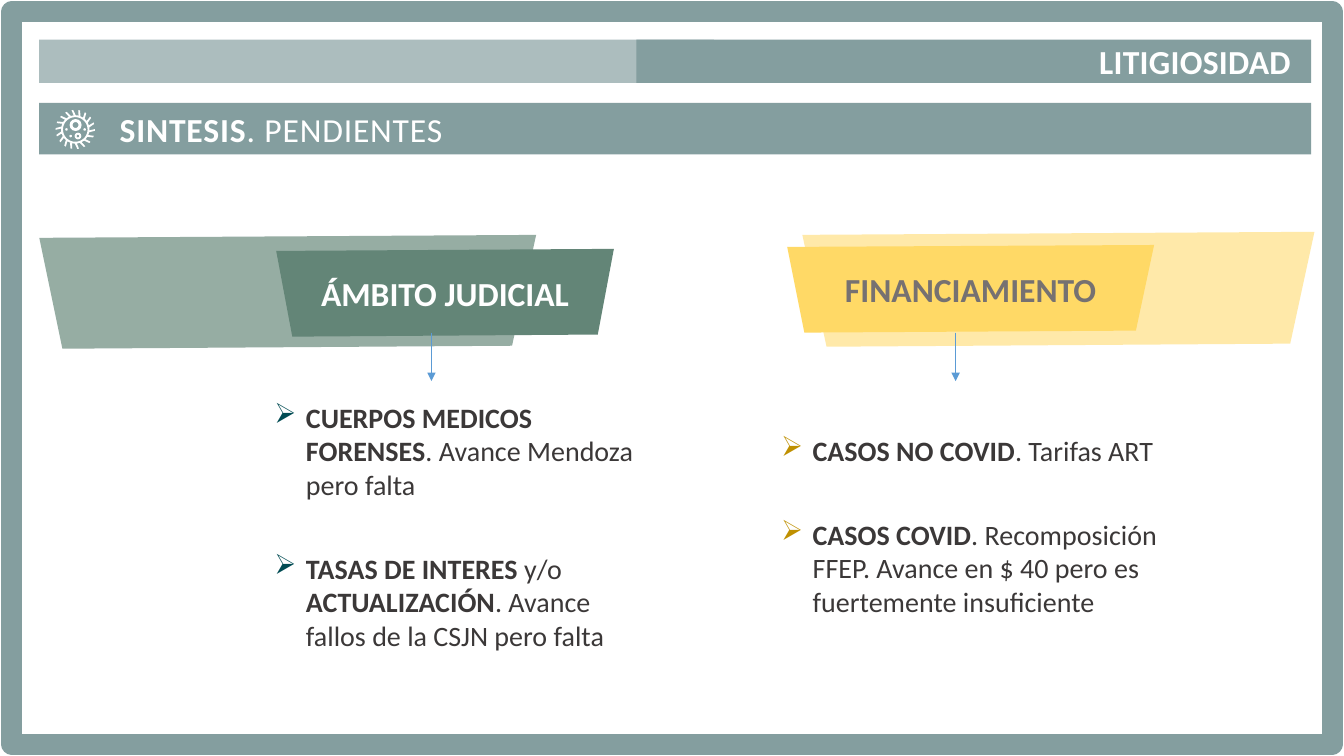
from math import cos, radians, sin

from lxml import etree
from pptx import Presentation
from pptx.dml.color import RGBColor
from pptx.enum.shapes import MSO_CONNECTOR, MSO_SHAPE
from pptx.enum.text import MSO_ANCHOR, MSO_AUTO_SIZE, PP_ALIGN
from pptx.oxml.ns import qn
from pptx.util import Pt

RECT, OVAL, DONUT = MSO_SHAPE.RECTANGLE, MSO_SHAPE.OVAL, MSO_SHAPE.DONUT
STRAIGHT = MSO_CONNECTOR.STRAIGHT
MIDDLE = MSO_ANCHOR.MIDDLE
GROW = MSO_AUTO_SIZE.SHAPE_TO_FIT_TEXT
LEFT, CENTER, RIGHT = PP_ALIGN.LEFT, PP_ALIGN.CENTER, PP_ALIGN.RIGHT

TEAL = RGBColor(0x84, 0x9E, 0x9F)
GREEN = RGBColor(0x63, 0x85, 0x77)
YELLOW = RGBColor(0xFF, 0xD9, 0x66)
WHITE = RGBColor(0xFF, 0xFF, 0xFF)
GRAY = RGBColor(0x76, 0x71, 0x71)
DARK = RGBColor(0x3B, 0x38, 0x38)
BLUE = RGBColor(0x5B, 0x9B, 0xD5)
PETROL = RGBColor(0x00, 0x4B, 0x53)
GOLD = RGBColor(0xBF, 0x90, 0x00)


def paint(sp, color, opacity=100):
    """Give a shape a flat fill without outline or shadow."""
    sp.shadow.inherit = False
    sp.line.fill.background()
    sp.fill.solid()
    sp.fill.fore_color.rgb = color
    if opacity < 100:
        clr = sp._element.spPr.find(qn("a:solidFill"))[0]
        etree.SubElement(clr, qn("a:alpha"), val=str(opacity * 1000))


def write(p, runs, size, color, spacing=0):
    """Add (text, bold) runs to a paragraph; spacing is in hundredths of a point."""
    for text, bold in runs:
        r = p.add_run()
        r.text = text
        fmt = {"name": "Calibri", "size": Pt(size), "bold": bold}
        for key, value in fmt.items():
            setattr(r.font, key, value)
        r.font.color.rgb = color
        if spacing:
            r._r.get_or_add_rPr().set("spc", str(spacing))


prs = Presentation()
prs.slide_width, prs.slide_height = Pt(960), Pt(540)
s = prs.slides.add_slide(prs.slide_layouts[6])
shapes = s.shapes

# Slanted bands, and the labels over them
bands = [
    ([(938.9, 165.6), (573.1, 167.8), (590.4, 247.7), (921.6, 245.5)], YELLOW, 56, None, None),
    ([(383, 167.8), (28.1, 169.9), (44.6, 249.1), (365.8, 247)], GREEN, 67, None, None),
    ([(438.5, 177.8), (197.3, 179.3), (208.8, 240.5), (427, 239)], GREEN, 100,
     "ÁMBITO JUDICIAL", WHITE),
    ([(824.4, 175), (562.3, 176.4), (574.6, 237.6), (811.4, 236.2)], YELLOW, 100,
     "FINANCIAMIENTO", GRAY),
]
for corners, color, opacity, label, label_color in bands:
    points = [(Pt(x), Pt(y)) for x, y in corners]
    builder = shapes.build_freeform(*points[0])
    builder.add_line_segments(points[1:])
    sp = builder.convert_to_shape()
    paint(sp, color, opacity)
    if label:
        tf = sp.text_frame
        tf.word_wrap = True
        tf.vertical_anchor = MIDDLE
        p = tf.paragraphs[0]
        p.alignment = CENTER
        write(p, [(label, True)], 24, label_color)

frame = shapes.add_shape(RECT, Pt(8.5), Pt(8.5), Pt(943), Pt(523))
frame.shadow.inherit = False
frame.fill.background()
frame.line.color.rgb = TEAL
frame.line.width = Pt(15)

# Header bars: box, opacity, runs, alignment, left and right inset, letter spacing
bars = [
    ((28, 28.3, 482, 31), 67, [], LEFT, 0, 0, 0),
    ((454.5, 28.3, 482, 31), 100, [("LITIGIOSIDAD", True)], RIGHT, 0, 14.4, 20),
    ((28, 73.5, 908.5, 36.7), 100, [("SINTESIS", True), (". PENDIENTES", False)],
     LEFT, 57.5, 0, 60),
]
for box, opacity, runs, align, left, right, spacing in bars:
    sp = shapes.add_shape(RECT, *map(Pt, box))
    paint(sp, TEAL, opacity)
    if runs:
        tf = sp.text_frame
        tf.vertical_anchor = MIDDLE
        tf.margin_left, tf.margin_right = Pt(left), Pt(right)
        tf.margin_top = tf.margin_bottom = 0
        p = tf.paragraphs[0]
        p.alignment = align
        p.space_before = Pt(1)
        write(p, runs, 24, WHITE, spacing)

# Cell icon: a spiked ring with leaning tips, then the parts inside it
CELL_X, CELL_Y, SPIKES = 53.8, 92.5, 18
step = 360 / SPIKES
outline = [(10.4, 4), (14, -3), (14, -8), (10.4, -4)]
rim = [(radius, i * step - 93 + turn) for i in range(SPIKES) for radius, turn in outline]
hole = [(8.8, i * 10) for i in range(36)]
rim, hole = [
    [(Pt(CELL_X + radius * cos(radians(a))), Pt(CELL_Y + radius * sin(radians(a))))
     for radius, a in contour]
    for contour in (rim, hole)
]
builder = shapes.build_freeform(*rim[0])
builder.add_line_segments(rim[1:])
builder.move_to(*hole[0])
builder.add_line_segments(hole[1:])
paint(builder.convert_to_shape(), WHITE)

cell_parts = [
    (DONUT, 54, 89.3, 8.6, 0.25), (DONUT, 55.7, 97.2, 4.8, 0.3),
    (OVAL, 47.5, 92.5, 1.8, None), (OVAL, 50.5, 97.2, 1.8, None), (OVAL, 60.5, 92.5, 1.8, None),
]
for kind, x, y, size, wall in cell_parts:
    sp = shapes.add_shape(kind, Pt(x - size / 2), Pt(y - size / 2), Pt(size), Pt(size))
    if wall:
        sp.adjustments[0] = wall
    paint(sp, WHITE)

# Bulleted lists: box, text indent, bullet colour, paragraphs
HANG = 22.5
lists = [
    ((558, 308.9, 270.7, 133.2), 22.5, GOLD, [
        [("CASOS NO COVID", True), (". Tarifas ART", False)],
        [("CASOS COVID", True),
         (". Recomposición FFEP. Avance en $ 40 pero es fuertemente insuficiente", False)],
    ]),
    ((173.5, 285.1, 288.7, 181.4), 45, PETROL, [
        [("CUERPOS MEDICOS FORENSES", True), (". Avance Mendoza pero falta", False)],
        [("TASAS DE INTERES", True), (" y/o ", False), ("ACTUALIZACIÓN", True),
         (". Avance fallos de la CSJN pero falta", False)],
    ]),
]
for box, indent, bullet_color, items in lists:
    tf = shapes.add_textbox(*map(Pt, box)).text_frame
    fmt = {"word_wrap": True, "auto_size": GROW, "vertical_anchor": MIDDLE,
           "margin_left": 0, "margin_right": 0, "margin_top": 0, "margin_bottom": 0}
    for key, value in fmt.items():
        setattr(tf, key, value)
    for i, runs in enumerate(items):
        p = tf.add_paragraph() if i else tf.paragraphs[0]
        p.space_before = p.space_after = Pt(18)
        pPr = p._p.get_or_add_pPr()
        pPr.set("marL", str(Pt(indent)))
        pPr.set("indent", str(-Pt(HANG)))
        clr = etree.SubElement(pPr, qn("a:buClr"))
        etree.SubElement(clr, qn("a:srgbClr"), val=str(bullet_color))
        etree.SubElement(pPr, qn("a:buChar"), char="➢")
        write(p, runs, 20, DARK)

for x in (308.2, 682.6):
    arrow = shapes.add_connector(STRAIGHT, Pt(x), Pt(237.6), Pt(x), Pt(272.2))
    arrow.line.color.rgb = BLUE
    arrow.line.width = Pt(0.5)
    etree.SubElement(arrow.line._get_or_add_ln(), qn("a:tailEnd"), type="triangle")
    etree.SubElement(arrow._element.spPr, qn("a:effectLst"))

prs.save("out.pptx")
